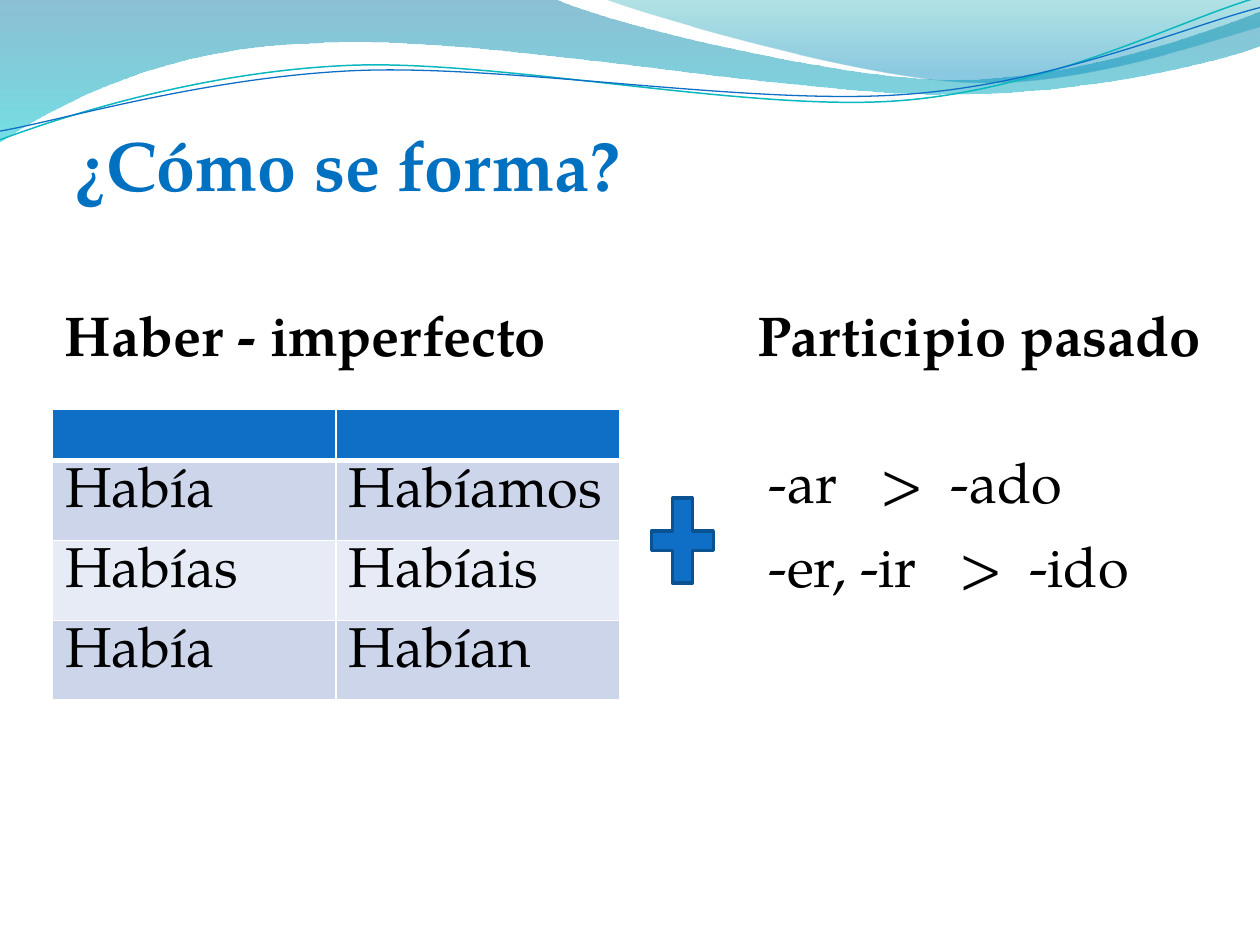
from lxml.etree import SubElement
from pptx import Presentation
from pptx.dml.color import RGBColor
from pptx.enum.shapes import MSO_SHAPE
from pptx.oxml import parse_xml
from pptx.oxml.ns import nsdecls, qn
from pptx.util import Pt

FONT = "TeX Gyre Pagella"
COLORS = {
    "title": "0070C0",
    "text": "000000",
    "accent": "0F6FC6",
    "accent_edge": "0B5292",
    "teal_line": "0AB8BF",
    "band_dark": "CCD5EA",
    "band_light": "E7EBF5",
    "border": "FFFFFF",
    "wave_top": "0074A1",
    "wave_bottom": "00C6CF",
    "crest_top": "00A1A9",
    "crest_bottom": "008BBF",
}
WAVE = [
    (0, 0), (316.8, -0.7),
    (342.7, 12.2, 478.1, 45.4, 545.8, 45.4), (614.2, 45.4, 689.8, 18.7, 720, 6.5),
    (720.7, 25.9),
    (707.8, 31.7, 626.4, 54.7, 537.1, 54), (447.8, 54, 275, 20.2, 185, 24.5),
    (92.9, 25.9, 33.1, 59.8, -0.7, 81.4), (0, 0),
]
CREST = [
    (344.9, -0.7), (366.5, 7.9, 491, 44.6, 553.7, 46.8),
    (616.3, 49.7, 691.9, 23, 720, 15.1), (720, 0), (344.9, -0.7),
]
TEAL_CURVE = [
    (0, 79.9), (34.6, 67, 113.8, 41, 199.4, 37.4),
    (284.4, 33.8, 427, 64.1, 513.4, 57.6), (599.8, 51.1, 675.4, 10.8, 718.6, -1.4),
]
BLUE_CURVE = [
    (0, 74.9), (33.8, 69.1, 118.1, 43.9, 203.8, 40.3),
    (290.2, 36.7, 429.8, 60.5, 516.2, 54), (601.9, 48.2, 677.5, 15.1, 720, 4.3),
]
CONJUGATION = [("", ""), ("Había", "Habíamos"), ("Habías", "Habíais"), ("Había", "Habían")]
ROW_HEIGHT = 29.2


def rgb(color):
    return RGBColor.from_string(COLORS[color])


def add_outline(slide, segments, close):
    points = [(Pt(x), Pt(y)) for segment in segments
              for x, y in zip(segment[::2], segment[1::2])]
    builder = slide.shapes.build_freeform(*points[0])
    builder.add_line_segments(points[1:], close=close)
    outline = builder.convert_to_shape()
    outline.shadow.inherit = False
    steps = outline._element.spPr.iter(qn("a:lnTo"))
    steps = iter(list(steps))
    for segment in segments[1:]:
        step = next(steps)
        if len(segment) == 6:
            step.tag = qn("a:cubicBezTo")
            for _ in range(2):
                control = next(steps)
                step.append(control[0])
                control.getparent().remove(control)
    return outline


def add_wave(slide, segments, stops):
    wave = add_outline(slide, segments, close=True)
    wave.line.fill.background()
    wave.fill.gradient()
    wave.fill.gradient_angle = 270
    for stop, (position, color, _) in zip(wave.fill.gradient_stops, stops):
        stop.position = position
        stop.color.rgb = rgb(color)
    tints = wave._element.spPr.iter(qn("a:srgbClr"))
    for tint, (_, _, opacity) in zip(tints, stops):
        SubElement(tint, qn("a:alpha"), val=str(opacity * 1000))


def add_curve(slide, segments, color, width):
    curve = add_outline(slide, segments, close=False)
    curve.fill.background()
    curve.line.color.rgb = rgb(color)
    curve.line.width = Pt(width)


def write(frame, text, size=32, color="text", bold=False, tabs=()):
    paragraph = frame.paragraphs[0]
    run = paragraph.add_run()
    run.text = text
    run.font.name = FONT
    run.font.size = Pt(size)
    run.font.bold = bold
    run.font.color.rgb = rgb(color)
    if tabs:
        tab_list = SubElement(paragraph._p.get_or_add_pPr(), qn("a:tabLst"))
        for tab in tabs:
            SubElement(tab_list, qn("a:tab"), pos=str(Pt(tab)), algn="l")


def add_text(slide, left, top, width, height, text, **style):
    frame = slide.shapes.add_textbox(Pt(left), Pt(top), Pt(width), Pt(height)).text_frame
    frame.word_wrap = True
    write(frame, text, **style)


def set_borders(cell, **widths):
    properties = cell._tc.get_or_add_tcPr()
    for index, (side, width) in enumerate(widths.items()):
        properties.insert(index, parse_xml(
            f'<a:ln{side} {nsdecls("a")} w="{Pt(width)}"><a:solidFill>'
            f'<a:srgbClr val="{COLORS["border"]}"/></a:solidFill></a:ln{side}>'))


def add_conjugation(slide):
    holder = slide.shapes.add_table(
        4, 2, Pt(30), Pt(234), Pt(324), Pt(ROW_HEIGHT * len(CONJUGATION)))
    holder.height = Pt(166.3)
    for row, forms in enumerate(CONJUGATION):
        fill = ("band_dark" if row % 2 else "band_light") if row else "accent"
        for column, form in enumerate(forms):
            cell = holder.table.cell(row, column)
            cell.fill.solid()
            cell.fill.fore_color.rgb = rgb(fill)
            set_borders(cell, L=1, R=1, T=3 if row == 1 else 1, B=1 if row else 3)
            if form:
                write(cell.text_frame, form)


def add_plus(slide):
    plus = slide.shapes.add_shape(MSO_SHAPE.MATH_PLUS, Pt(366), Pt(276), Pt(48), Pt(66))
    plus.shadow.inherit = False
    plus.fill.solid()
    plus.fill.fore_color.rgb = rgb("accent")
    plus.line.color.rgb = rgb("accent_edge")
    plus.line.width = Pt(2)


def main():
    deck = Presentation()
    deck.slide_width, deck.slide_height = Pt(720), Pt(540)
    slide = deck.slides.add_slide(deck.slide_layouts[6])
    add_wave(slide, WAVE, [(0, "wave_top", 45), (1, "wave_bottom", 55)])
    add_wave(slide, CREST, [(0, "crest_top", 30), (0.8, "crest_bottom", 45)])
    add_curve(slide, TEAL_CURVE, "teal_line", 0.85)
    add_curve(slide, BLUE_CURVE, "accent", 0.75)
    add_text(slide, 36, 66, 636, 55.5, "¿Cómo se forma?", size=40, color="title", bold=True)
    add_conjugation(slide)
    add_text(slide, 30, 168, 360, 46, "Haber - imperfecto", bold=True)
    add_plus(slide)
    add_text(slide, 426, 168, 282, 46, "Participio pasado", bold=True)
    add_text(slide, 432, 252, 270, 46, "-ar\t>\t-ado", tabs=(64, 104))
    add_text(slide, 432, 300, 270, 46, "-er, -ir\t>\t-ido", tabs=(109, 149))
    deck.save("out.pptx")


if __name__ == "__main__":
    main()
